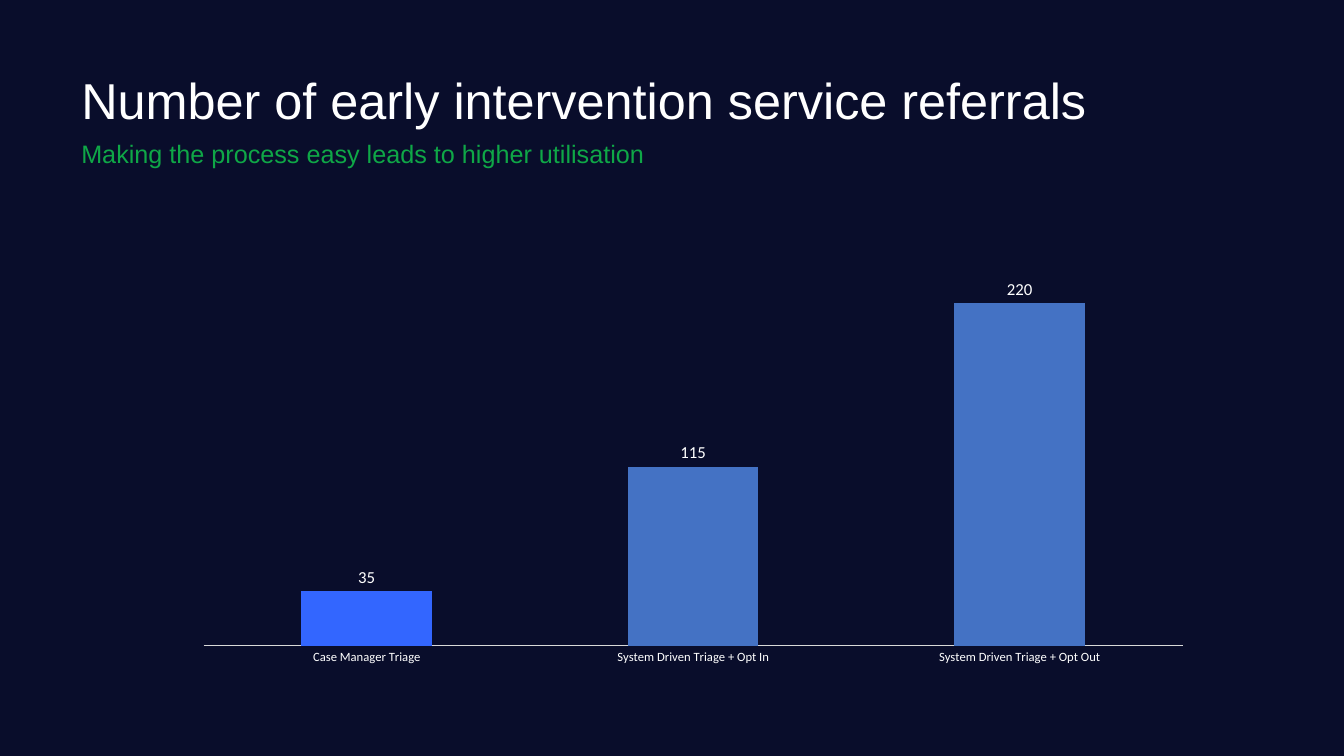
from lxml import etree
from pptx import Presentation
from pptx import util as u
from pptx.chart.data import CategoryChartData
from pptx.dml.color import RGBColor
from pptx.enum import chart as ch
from pptx.enum import text
from pptx.oxml.ns import qn

NAVY, WHITE, GREEN, GREY = "090D2B", "FFFFFF", "0FA747", "D9D9D9"
REFERRALS = {
    "Case Manager Triage": (35, "3366FF"),
    "System Driven Triage + Opt In": (115, "4472C4"),
    "System Driven Triage + Opt Out": (220, "4472C4"),
}


def rgb(color):
    return RGBColor.from_string(color)


def set_font(font, name, size, color):
    font.name, font.size = name, u.Pt(size)
    font.color.rgb = rgb(color)


def add_line(slide, box, words, size, color, spacing, anchor):
    tf = slide.shapes.add_textbox(*box).text_frame
    tf.word_wrap = True
    tf.vertical_anchor = anchor
    tf.text = words
    p = tf.paragraphs[0]
    p.line_spacing = spacing
    set_font(p.runs[0].font, "Arial", size, color)


def add_heading(slide, left, top):
    add_line(slide, (left, top, u.Cm(28.7), u.Cm(1.55)),
             "Number of early intervention service referrals",
             36, WHITE, 0.8, text.MSO_ANCHOR.MIDDLE)
    add_line(slide, (left, top + u.Cm(1.57), u.Cm(18.44), u.Cm(0.94)),
             "Making the process easy leads to higher utilisation",
             18, GREEN, 0.9, text.MSO_ANCHOR.TOP)


def set_plot_area(chart, x, y, w, h):
    """Fix the inner plot area, as fractions of the chart frame."""
    plot_area = chart._chartSpace.chart.plotArea
    for old in plot_area.findall(qn("c:layout")):
        plot_area.remove(old)
    layout = etree.Element(qn("c:layout"))
    manual = etree.SubElement(layout, qn("c:manualLayout"))
    settings = {"layoutTarget": "inner", "xMode": "edge", "yMode": "edge",
                "x": x, "y": y, "w": w, "h": h}
    for tag, val in settings.items():
        etree.SubElement(manual, qn(f"c:{tag}")).set("val", str(val))
    plot_area.insert(0, layout)


def add_referral_chart(slide, left, top, width, height):
    data = CategoryChartData()
    data.categories = list(REFERRALS)
    data.add_series("Series 1", [value for value, _ in REFERRALS.values()])
    chart = slide.shapes.add_chart(ch.XL_CHART_TYPE.COLUMN_CLUSTERED,
                                   left, top, width, height, data).chart
    chart.has_title = chart.has_legend = False
    set_font(chart.font, "Calibri", 10, WHITE)
    set_plot_area(chart, 0.11, 0.127, 0.89, 0.723)

    # Axes
    values = chart.value_axis
    values.minimum_scale, values.maximum_scale = 0, 250
    values.has_major_gridlines = False
    values.visible = False
    cats = chart.category_axis
    cats.major_tick_mark = ch.XL_TICK_MARK.NONE
    cats.format.line.color.rgb = rgb(GREY)
    cats.format.line.width = u.Pt(0.75)
    set_font(cats.tick_labels.font, "Calibri", 9, WHITE)

    # Columns and their labels
    plot = chart.plots[0]
    plot.gap_width = 150
    plot.vary_by_categories = False
    series = plot.series[0]
    for i, (_, color) in enumerate(REFERRALS.values()):
        fill = series.points[i].format.fill
        fill.solid()
        fill.fore_color.rgb = rgb(color)
    labels = series.data_labels
    labels.show_value = True
    labels.position = ch.XL_LABEL_POSITION.OUTSIDE_END
    set_font(labels.font, "Calibri", 12, WHITE)


def main():
    prs = Presentation()
    prs.slide_width, prs.slide_height = u.Cm(33.87), u.Cm(19.05)
    slide = prs.slides.add_slide(prs.slide_layouts[6])
    slide.background.fill.solid()
    slide.background.fill.fore_color.rgb = rgb(NAVY)
    add_heading(slide, u.Cm(1.8), u.Cm(1.88))
    add_referral_chart(slide, u.Cm(2.08), u.Cm(4.75), u.Cm(27.74), u.Cm(13.56))
    prs.save("out.pptx")


if __name__ == "__main__":
    main()
